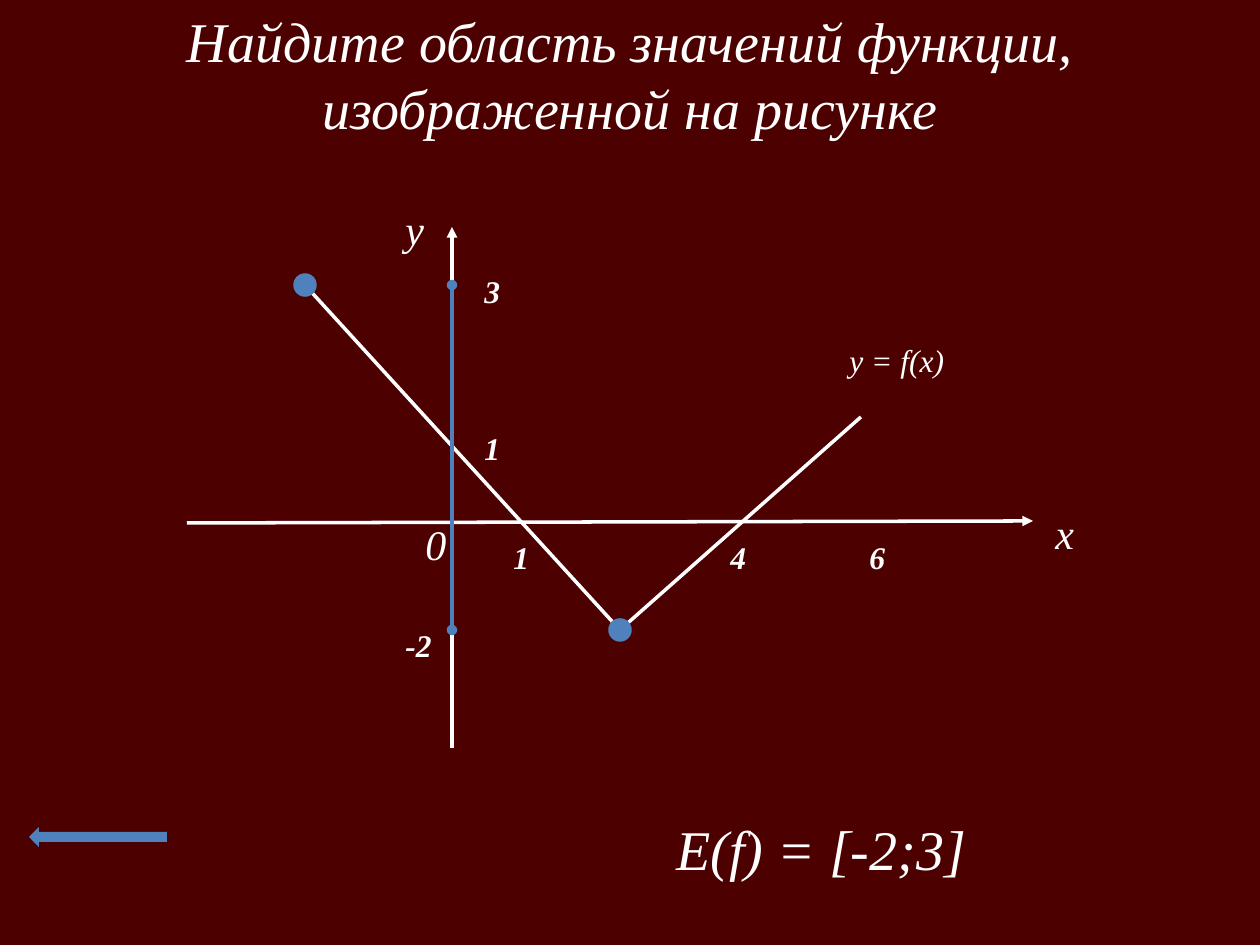
from lxml import etree
from pptx import Presentation
from pptx.dml.color import RGBColor
from pptx.enum import shapes as kinds, text as txt
from pptx.oxml.ns import qn
from pptx.util import Pt

PX = 914400 // 126
FONT = "Times New Roman"
WHITE = RGBColor(0xFF, 0xFF, 0xFF)
BLUE = RGBColor(0x4F, 0x81, 0xBD)
DARK = RGBColor(0x4C, 0x00, 0x00)

TITLE = "Найдите область значений функции, изображенной на рисунке"

# words, left, top, width, height, size, bold
LABELS = [
    ("x", 1043, 501, 69, 63, 24, False),
    ("y", 393, 197, 69, 63, 24, False),
    ("0", 413, 512, 69, 63, 24, False),
    ("1", 501, 532, 40, 50, 18, True),
    ("4", 718, 532, 50, 50, 18, True),
    ("6", 857, 532, 50, 50, 18, True),
    ("3", 472, 266, 50, 50, 18, True),
    ("1", 472, 423, 60, 50, 18, True),
    ("-2", 393, 620, 80, 50, 18, True),
    ("y = f(x)", 837, 335, 121, 50, 18, False),
    ("Е(f) = [-2;3]", 664, 808, 390, 80, 32, False),
]

START, LOW, END = (305, 285), (620, 630), (861, 417)
ZERO = 452  # x of the vertical axis
# from, to, colour, head, tail
AXES = [
    ((ZERO, 227), (ZERO, 748), WHITE, "triangle", None),
    ((1033, 521), (187, 523), WHITE, "triangle", None),
]
RANGE = ((ZERO, LOW[1]), (ZERO, START[1]), BLUE, "oval", "oval")
BRANCHES = [(START, LOW), (LOW, END)]
DOT = 20
BACK = (29, 827, 138, 20)

prs = Presentation()
prs.slide_width, prs.slide_height = 1260 * PX, 945 * PX
slide = prs.slides.add_slide(prs.slide_layouts[5])
slide.background.fill.solid()
slide.background.fill.fore_color.rgb = DARK
shapes = slide.shapes


def emu(*vals):
    return [v * PX for v in vals]


def style(para, size, bold=False):
    font = para.font
    font.name, font.size = FONT, Pt(size)
    font.bold, font.italic = bold, True
    font.color.rgb = WHITE


def line(start, end, color, head, tail):
    link = shapes.add_connector(kinds.MSO_CONNECTOR.STRAIGHT, *emu(*start, *end))
    link.line.color.rgb, link.line.width = color, Pt(2)
    for tag, kind in (("a:headEnd", head), ("a:tailEnd", tail)):
        if kind:
            etree.SubElement(link.line._ln, qn(tag), type=kind)
    etree.SubElement(link._element.spPr, qn("a:effectLst"))


def solid(kind, box):
    shape = shapes.add_shape(kind, *emu(*box))
    shape.shadow.inherit = False
    shape.fill.solid()
    shape.fill.fore_color.rgb = BLUE
    shape.line.fill.background()
    return shape


def branch(start, end):
    form = shapes.build_freeform(*start, scale=PX)
    form.add_line_segments([end], close=False)
    shape = form.convert_to_shape()
    shape.shadow.inherit = False
    shape.fill.background()
    shape.line.color.rgb, shape.line.width = WHITE, Pt(2)


def dot(x, y):
    shape = solid(kinds.MSO_SHAPE.OVAL, (x - DOT // 2, y - DOT // 2, DOT, DOT))
    shape.line.color.rgb, shape.line.width = BLUE, Pt(2)


def label(words, left, top, width, height, size, bold):
    frame = shapes.add_textbox(*emu(left, top, width, height)).text_frame
    frame.word_wrap = True
    frame.text = words
    style(frame.paragraphs[0], size, bold)


title = shapes.title
title.left, title.top, title.width, title.height = emu(0, -1, 1260, 149)
title.text_frame.text = TITLE
title.text_frame.vertical_anchor = txt.MSO_ANCHOR.MIDDLE
title.text_frame.paragraphs[0].alignment = txt.PP_ALIGN.CENTER
style(title.text_frame.paragraphs[0], 32)

for axis in AXES:
    line(*axis)
for ends in BRANCHES:
    branch(*ends)
line(*RANGE)
for point in (START, LOW):
    dot(*point)
for item in LABELS:
    label(*item)
solid(kinds.MSO_SHAPE.LEFT_ARROW, BACK)

prs.save("out.pptx")
